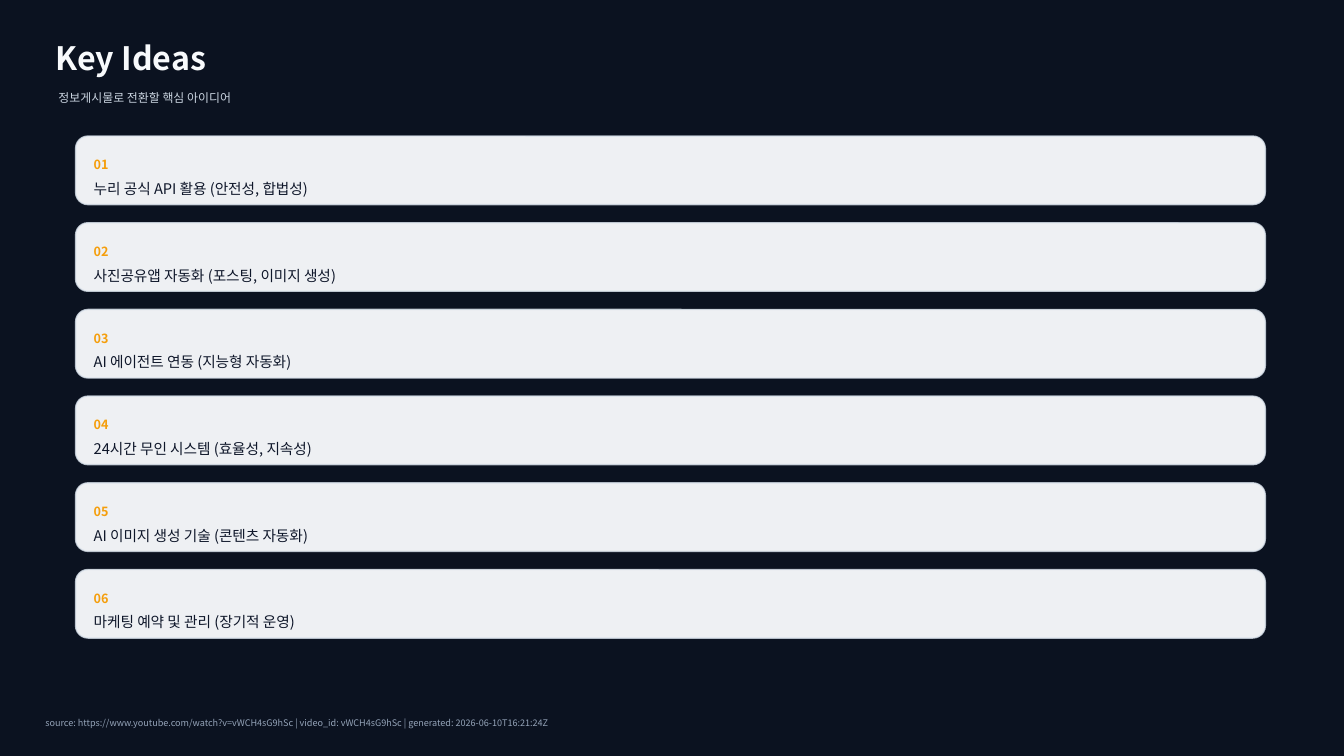
from dataclasses import dataclass

from lxml.etree import SubElement
from pptx import Presentation
from pptx.dml.color import RGBColor
from pptx.enum.shapes import MSO_SHAPE
from pptx.enum.text import MSO_ANCHOR, MSO_AUTO_SIZE, PP_ALIGN
from pptx.oxml.ns import qn
from pptx.util import Pt

EMU_PER_PX = 9144


@dataclass(frozen=True)
class Theme:
    """Colours, font and type sizes of the deck."""
    font: str = "Noto Sans CJK KR"
    background: str = "0B1220"
    card: str = "F8FAFC"
    card_edge: str = "D7E0EA"
    heading: str = "F8FAFC"
    subtitle: str = "CBD5E1"
    number: str = "F59E0B"
    idea: str = "0F172A"
    source: str = "94A3B8"
    heading_size: float = 23
    subtitle_size: float = 8.5
    number_size: float = 9
    idea_size: float = 10.5
    source_size: float = 6.5


THEME = Theme()

IDEAS = [
    "누리 공식 API 활용 (안전성, 합법성)",
    "사진공유앱 자동화 (포스팅, 이미지 생성)",
    "AI 에이전트 연동 (지능형 자동화)",
    "24시간 무인 시스템 (효율성, 지속성)",
    "AI 이미지 생성 기술 (콘텐츠 자동화)",
    "마케팅 예약 및 관리 (장기적 운영)",
]
SOURCE = ("source: https://www.youtube.com/watch?v=vWCH4sG9hSc"
          " | video_id: vWCH4sG9hSc | generated: 2026-06-10T16:21:24Z")


def px(*lengths):
    """Turn whole px lengths into EMU."""
    return [length * EMU_PER_PX for length in lengths]


def set_alpha(fill_format, percent):
    """Make a solid fill partly transparent."""
    colour = fill_format._xPr.find(qn("a:solidFill"))[0]
    SubElement(colour, qn("a:alpha")).set("val", str(percent * 1000))


def add_text(slide, box, text, *, size, color, bold=False, holder=None):
    """Write one line of text into a placeholder or a new text box."""
    holder = holder or slide.shapes.add_textbox(*px(*box))
    holder.left, holder.top, holder.width, holder.height = px(*box)
    frame = holder.text_frame
    frame.word_wrap = True
    frame.auto_size = MSO_AUTO_SIZE.NONE
    frame.vertical_anchor = MSO_ANCHOR.MIDDLE
    frame.margin_left = frame.margin_right = 0
    frame.margin_top = frame.margin_bottom = 0
    line = frame.paragraphs[0]
    line.alignment = PP_ALIGN.LEFT
    run = line.add_run()
    run.text = text
    run.font.size = Pt(size)
    run.font.bold = bold
    run.font.color.rgb = RGBColor.from_string(color)
    run.font.name = THEME.font
    east_asian = SubElement(run._r.get_or_add_rPr(), qn("a:ea"))
    east_asian.set("typeface", THEME.font)


def add_header(slide, box):
    """Place the title and the subtitle below it."""
    left, top, width, _ = box
    add_text(slide, (left, top, width, 45), "Key Ideas", bold=True,
             size=THEME.heading_size, color=THEME.heading,
             holder=slide.shapes.title)
    add_text(slide, (left + 3, top + 48, width - 50, 28),
             "정보게시물로 전환할 핵심 아이디어",
             size=THEME.subtitle_size, color=THEME.subtitle)


def add_idea_card(slide, box, number, idea):
    """Draw one rounded card with its number and idea."""
    left, top, width, _ = box
    card = slide.shapes.add_shape(MSO_SHAPE.ROUNDED_RECTANGLE, *px(*box))
    card.adjustments[0] = 0.18
    card.shadow.inherit = False
    card.fill.solid()
    card.fill.fore_color.rgb = RGBColor.from_string(THEME.card)
    set_alpha(card.fill, 96)
    card.line.width = Pt(1)
    card.line.color.rgb = RGBColor.from_string(THEME.card_edge)
    set_alpha(card.line.fill, 80)
    inner_left, inner_width = left + 18, width - 36
    add_text(slide, (inner_left, top + 16, inner_width, 25), f"{number:02d}",
             size=THEME.number_size, color=THEME.number, bold=True)
    add_text(slide, (inner_left, top + 50, inner_width, 4), idea,
             size=THEME.idea_size, color=THEME.idea)


def add_idea_list(slide, box, ideas, gap=18):
    """Stack the idea cards evenly within the box."""
    left, top, width, height = box
    card_height = (height + gap) // len(ideas) - gap
    for index, idea in enumerate(ideas):
        card_top = top + index * (card_height + gap)
        add_idea_card(slide, (left, card_top, width, card_height), index + 1, idea)


def add_source(slide, box):
    """Write the source line at the foot."""
    add_text(slide, box, SOURCE, size=THEME.source_size, color=THEME.source)


def main():
    """Build and save the slide."""
    deck = Presentation()
    deck.slide_width, deck.slide_height = px(1333, 750)
    slide = deck.slides.add_slide(deck.slide_layouts.get_by_name("Title Only"))
    slide.background.fill.solid()
    slide.background.fill.fore_color.rgb = RGBColor.from_string(THEME.background)
    add_header(slide, (55, 35, 1200, 76))
    add_idea_list(slide, (75, 135, 1180, 498), IDEAS)
    add_source(slide, (45, 705, 1240, 25))
    deck.save("out.pptx")


if __name__ == "__main__":
    main()
